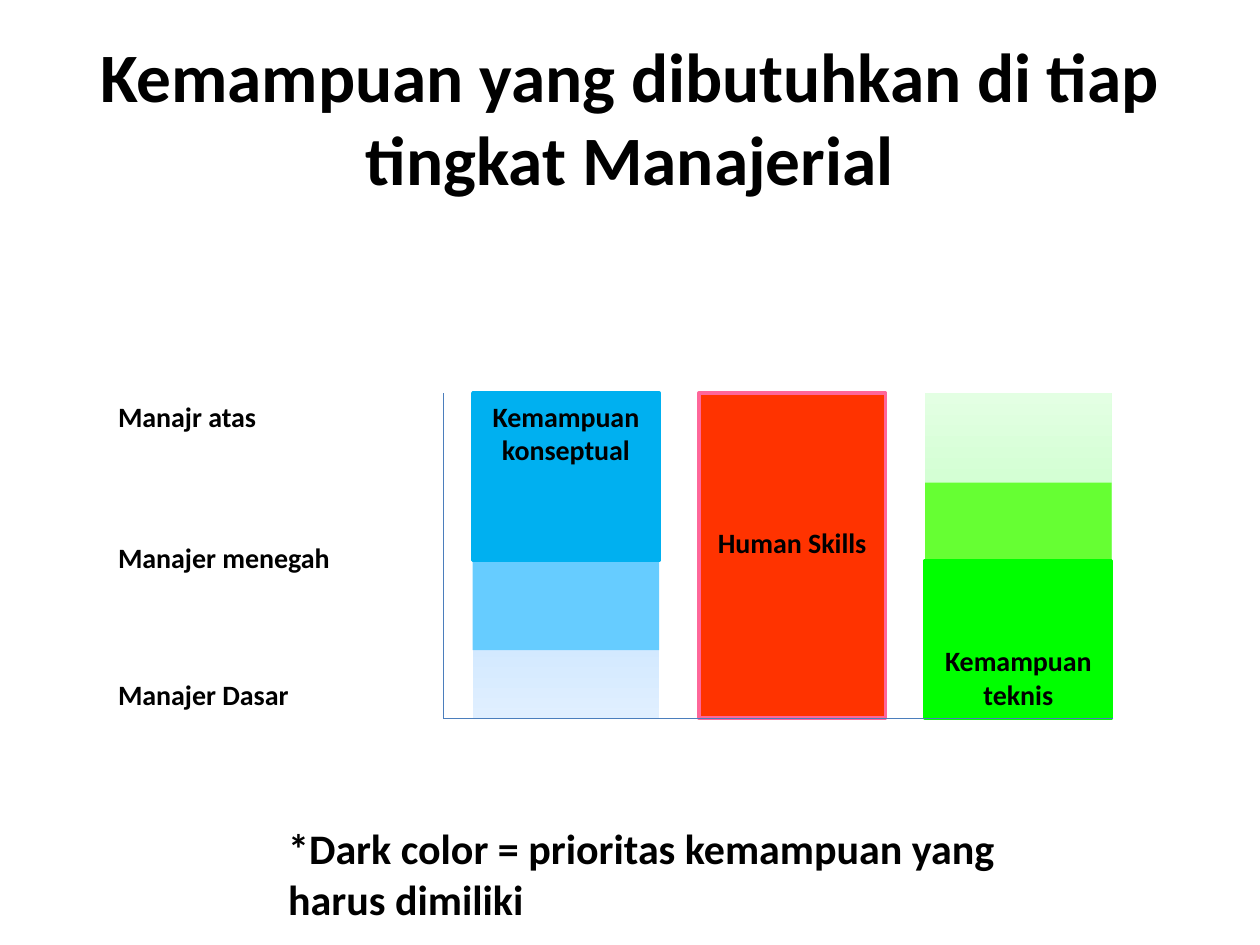
from copy import deepcopy

from lxml import etree
from pptx import Presentation
from pptx.dml.color import RGBColor
from pptx.enum.shapes import MSO_CONNECTOR, MSO_SHAPE
from pptx.enum.text import MSO_ANCHOR, PP_ALIGN
from pptx.oxml.ns import qn
from pptx.util import Cm, Pt

RECTANGLE = MSO_SHAPE.RECTANGLE
STRAIGHT = MSO_CONNECTOR.STRAIGHT
LEFT, CENTER = PP_ALIGN.LEFT, PP_ALIGN.CENTER
TOP, MIDDLE = MSO_ANCHOR.TOP, MSO_ANCHOR.MIDDLE

BLACK = RGBColor(0x00, 0x00, 0x00)
AXIS_BLUE = RGBColor(0x4B, 0x7E, 0xBC)
DARK_BLUE = RGBColor(0x00, 0xB0, 0xF0)
MEDIUM_BLUE = RGBColor(0x66, 0xCC, 0xFF)
PALE_BLUES = [RGBColor(0x96, 0xD0, 0xFF), RGBColor(0xBF, 0xE1, 0xFF), RGBColor(0xE0, 0xEF, 0xFF)]
RED = RGBColor(0xFF, 0x33, 0x00)
PINK = RGBColor(0xFF, 0x66, 0x99)
DARK_GREEN = RGBColor(0x00, 0xFF, 0x00)
MEDIUM_GREEN = RGBColor(0x66, 0xFF, 0x33)
PALE_GREENS = [RGBColor(0xA0, 0xFF, 0xA0), RGBColor(0xC5, 0xFF, 0xC5), RGBColor(0xE3, 0xFF, 0xE3)]

# Chart frame, in centimetres
BAR_TOP, BAR_BOTTOM, BAR_WIDTH = 7.92, 14.48, 3.76
CONCEPTUAL, HUMAN, TECHNICAL = [9.53 + 4.56 * column for column in range(3)]
AXIS_LEFT, AXIS_RIGHT = 8.94, 22.43

deck = Presentation()
deck.slide_width, deck.slide_height = Cm(25.4), Cm(19.05)
page = deck.slides.add_slide(deck.slide_layouts[6])


def add_bar(left, top, height, fill, outline=None, angle=90):
    """Draw a bar; a list of colours as fill makes a gradient at the counter-clockwise angle."""
    bar = page.shapes.add_shape(RECTANGLE, Cm(left), Cm(top), Cm(BAR_WIDTH), Cm(height))
    bar.shadow.inherit = False
    if isinstance(fill, list):
        bar.fill.gradient()
        bar.fill.gradient_angle = angle
        stop_list = bar.fill._fill._gradFill.gsLst
        stop_list.insert(1, deepcopy(stop_list[0]))
        for stop, color, position in zip(bar.fill.gradient_stops, fill, (0, 0.5, 1)):
            stop.color.rgb = color
            stop.position = position
    else:
        bar.fill.solid()
        bar.fill.fore_color.rgb = fill
    if outline is None:
        bar.line.fill.background()
    else:
        bar.line.color.rgb = outline
        bar.line.width = Pt(2)


def add_text(text, left, top, width, height, size=16, align=LEFT, anchor=TOP, wrap=True):
    box = page.shapes.add_textbox(Cm(left), Cm(top), Cm(width), Cm(height))
    frame = box.text_frame
    frame.word_wrap = wrap
    frame.vertical_anchor = anchor
    para = frame.paragraphs[0]
    para.alignment = align
    span = para.add_run()
    span.text = text
    span.font.name = "Calibri"
    span.font.size = Pt(size)
    span.font.bold = True
    span.font.color.rgb = BLACK


add_text("Kemampuan yang dibutuhkan di tiap tingkat Manajerial",
         1.27, 0.76, 22.86, 3.18, size=39.6, align=CENTER, anchor=MIDDLE)

# Skill bars, each priority layer over the paler one
bar_height = BAR_BOTTOM - BAR_TOP
add_bar(CONCEPTUAL, BAR_TOP, bar_height, PALE_BLUES, angle=270)
add_bar(HUMAN, BAR_TOP, bar_height, RED, outline=PINK)
add_bar(TECHNICAL, BAR_TOP, bar_height, PALE_GREENS, angle=90)
add_bar(TECHNICAL, 9.73, 3.18, MEDIUM_GREEN)
add_bar(TECHNICAL, 11.3, 3.18, DARK_GREEN, outline=DARK_GREEN)
add_bar(CONCEPTUAL, 9.73, 3.38, MEDIUM_BLUE)
add_bar(CONCEPTUAL, BAR_TOP, 3.38, DARK_BLUE, outline=DARK_BLUE)

for skill, left, top, height in [
    ("Human Skills", HUMAN, 10.46, 0.94),
    ("Kemampuan konseptual", CONCEPTUAL, BAR_TOP, 1.63),
    ("Kemampuan teknis", TECHNICAL, 12.85, 1.63),
]:
    add_text(skill, left, top, BAR_WIDTH, height, align=CENTER)

# Both axes meet at the lower left corner
for end_left, end_top in [(AXIS_LEFT, BAR_TOP), (AXIS_RIGHT, BAR_BOTTOM)]:
    axis = page.shapes.add_connector(
        STRAIGHT, Cm(AXIS_LEFT), Cm(BAR_BOTTOM), Cm(end_left), Cm(end_top))
    axis.line.color.rgb = AXIS_BLUE
    axis.line.width = Pt(0.75)
    etree.SubElement(axis._element.spPr, qn("a:effectLst"))

for level, top, width in [
    ("Manajr atas", BAR_TOP, 3.35),
    ("Manajer menegah", 10.77, 4.85),
    ("Manajer Dasar", 13.54, 3.99),
]:
    add_text(level, 2.13, top, width, 0.94, wrap=False)

add_text("*Dark color = prioritas kemampuan yang harus dimiliki",
         5.56, 16.46, 15.47, 2.31, size=24)

deck.save("out.pptx")
